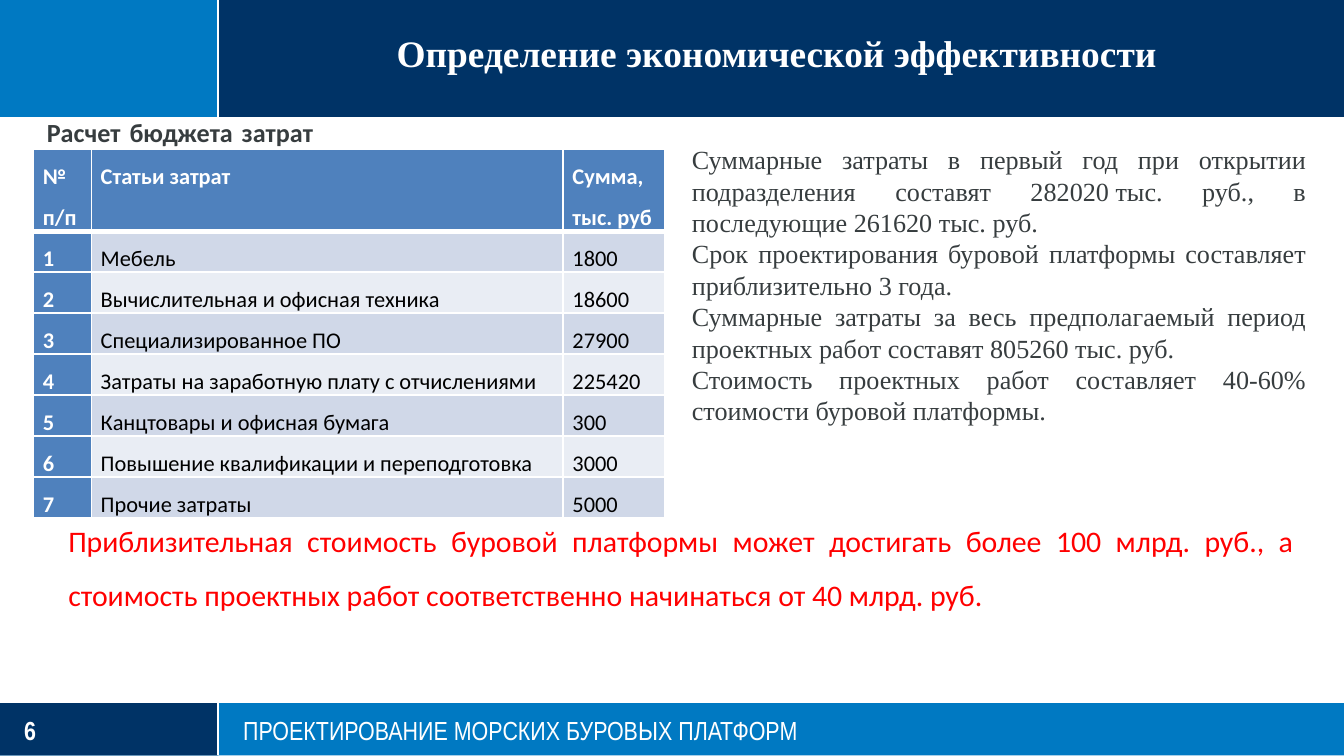
"""Build the slide on the economic efficiency of a drilling platform project."""
from dataclasses import dataclass

from lxml.etree import SubElement
from pptx import Presentation
from pptx.dml.color import RGBColor
from pptx.enum.shapes import MSO_CONNECTOR, MSO_SHAPE
from pptx.enum.text import MSO_ANCHOR, MSO_AUTO_SIZE, PP_ALIGN
from pptx.oxml import parse_xml
from pptx.oxml.ns import nsdecls, qn
from pptx.util import Inches, Pt


@dataclass(frozen=True)
class Theme:
    navy: str = "003366"
    blue: str = "0079C2"
    white: str = "FFFFFF"
    black: str = "000000"
    grey: str = "373D3F"
    red: str = "FF0000"
    head: str = "4F81BD"
    bands: tuple = ("D0D8E8", "E9EDF4")
    serif: str = "Times New Roman"
    sans: str = "Calibri"
    narrow: str = "Arial Narrow"
    title_size: int = 20
    accent_size: int = 16
    body_size: int = 14
    table_size: int = 12


theme = Theme()


def write(para, text, font, size, color, bold=False, align=PP_ALIGN.JUSTIFY, spacing=None, margin=0):
    para.alignment = align
    if spacing:
        para.line_spacing = spacing
    if margin:
        properties = para._p.get_or_add_pPr()
        properties.set("marL", str(Inches(margin)))
        properties.set("indent", "0")
    span = para.add_run()
    span.text = text
    span.font.name = font
    span.font.size = Pt(size)
    span.font.bold = bold
    span.font.color.rgb = RGBColor.from_string(color)


def set_frame(box, anchor=MSO_ANCHOR.TOP, inset=None):
    frame = box.text_frame
    frame.word_wrap = True
    frame.auto_size = MSO_AUTO_SIZE.NONE
    frame.vertical_anchor = anchor
    if inset is not None:
        frame.margin_left = frame.margin_right = Inches(inset)
        frame.margin_top = frame.margin_bottom = Inches(inset)
    return frame


deck = Presentation()
deck.slide_width, deck.slide_height = Inches(10), Inches(10 * 9 / 16)
page = deck.slides.add_slide(deck.slide_layouts[5])
shapes = page.shapes

bars = [
    (5.23, 10, 0.39, theme.blue),
    (0, 10, 0.87, theme.navy),
    (0, 1.62, 0.87, theme.blue),
    (5.23, 1.62, 0.39, theme.navy),
]
for top, width, height, color in bars:
    bar = shapes.add_shape(MSO_SHAPE.RECTANGLE, 0, Inches(top), Inches(width), Inches(height))
    bar.shadow.inherit = False
    bar.fill.solid()
    bar.fill.fore_color.rgb = RGBColor.from_string(color)
    bar.line.fill.background()

rules = [(0, 5.22, 10, 5.22), (1.62, 5.22, 1.62, 5.62), (1.62, 0, 1.62, 0.88), (0, 0.88, 10, 0.88)]
for ends in rules:
    rule = shapes.add_connector(MSO_CONNECTOR.STRAIGHT, *map(Inches, ends))
    rule.line.color.rgb = RGBColor.from_string(theme.white)
    rule.line.width = Pt(1.25)
    SubElement(rule._element.spPr, qn("a:effectLst"))

footers = [(0.18, 1.01, "6", True), (1.81, 8.01, "ПРОЕКТИРОВАНИЕ МОРСКИХ БУРОВЫХ ПЛАТФОРМ", False)]
for left, width, text, bold in footers:
    box = shapes.add_textbox(Inches(left), Inches(5.31), Inches(width), Inches(0.24))
    frame = set_frame(box, MSO_ANCHOR.MIDDLE, 0)
    write(frame.paragraphs[0], text, theme.narrow, theme.body_size, theme.white, bold, PP_ALIGN.LEFT)

title = shapes.title
title.left, title.top, title.width, title.height = map(Inches, (1.81, 0.08, 8.01, 0.48))
frame = set_frame(title, MSO_ANCHOR.BOTTOM, 0)
write(frame.paragraphs[0], "Определение экономической эффективности ", theme.serif,
      theme.title_size, theme.white, True, PP_ALIGN.CENTER)
shapes.element.append(title.element)

caption = shapes.add_textbox(0, Inches(0.82), Inches(2.43), Inches(0.34))
write(set_frame(caption).paragraphs[0], "Расчет бюджета затрат ", theme.sans,
      theme.body_size, theme.grey, True, margin=0.25)

costs = [
    ("№ п/п", "Статьи затрат", "Сумма, тыс. руб"),
    ("1", "Мебель", "1800"),
    ("2", "Вычислительная и офисная техника", "18600"),
    ("3", "Специализированное ПО", "27900"),
    ("4", "Затраты на заработную плату с отчислениями", "225420"),
    ("5", "Канцтовары и офисная бумага", "300"),
    ("6", "Повышение квалификации и переподготовка ", "3000"),
    ("7", "Прочие затраты", "5000"),
]
table = shapes.add_table(len(costs), 3, Inches(0.25), Inches(1.11), Inches(4.7), Inches(2.44)).table
table.horz_banding = False
for column, width in zip(table.columns, (0.43, 3.51, 0.76)):
    column.width = Inches(width)
for row_index, texts in enumerate(costs):
    table.rows[row_index].height = Inches(0)
    for column_index, text in enumerate(texts):
        cell = table.cell(row_index, column_index)
        is_head = row_index == 0 or column_index == 0
        cell.margin_left = cell.margin_right = Inches(0.07)
        cell.margin_top = cell.margin_bottom = 0
        cell.fill.solid()
        fill = theme.head if is_head else theme.bands[(row_index - 1) % 2]
        cell.fill.fore_color.rgb = RGBColor.from_string(fill)
        write(cell.text_frame.paragraphs[0], text, theme.sans, theme.table_size,
              theme.white if is_head else theme.black, is_head, spacing=1.5)
        widths = {"L": 1, "R": 1, "T": 3 if row_index == 1 else 1, "B": 1 if row_index else 3}
        for position, (side, points) in enumerate(widths.items()):
            border = parse_xml(
                f'<a:ln{side} {nsdecls("a")} w="{Pt(points)}"><a:solidFill>'
                f'<a:srgbClr val="{theme.white}"/></a:solidFill></a:ln{side}>')
            cell._tc.get_or_add_tcPr().insert(position, border)

no_break_space = chr(160)
findings = [
    "Суммарные затраты в первый год при открытии подразделения составят "
    f"282020{no_break_space}тыс. руб., в последующие 261620 тыс. руб. ",
    "Срок проектирования буровой платформы составляет приблизительно 3 года.",
    "Суммарные затраты за весь предполагаемый период проектных работ составят 805260 тыс. руб.",
    "Стоимость проектных работ составляет 40-60% стоимости буровой платформы.",
]
box = shapes.add_textbox(Inches(5.05), Inches(1.02), Inches(4.77), Inches(2.22))
frame = set_frame(box)
for index, text in enumerate(findings):
    para = frame.add_paragraph() if index else frame.paragraphs[0]
    write(para, text, theme.serif, theme.body_size, theme.grey)

conclusion = shapes.add_textbox(Inches(0.16), Inches(3.71), Inches(9.57), Inches(0.87))
para = set_frame(conclusion).paragraphs[0]
para.space_after = Pt(8)
write(para, "Приблизительная стоимость буровой платформы может достигать более 100 млрд. руб., "
      "а стоимость проектных работ соответственно начинаться от 40 млрд. руб. ",
      theme.sans, theme.accent_size, theme.red, spacing=1.5, margin=0.25)

deck.save("out.pptx")
